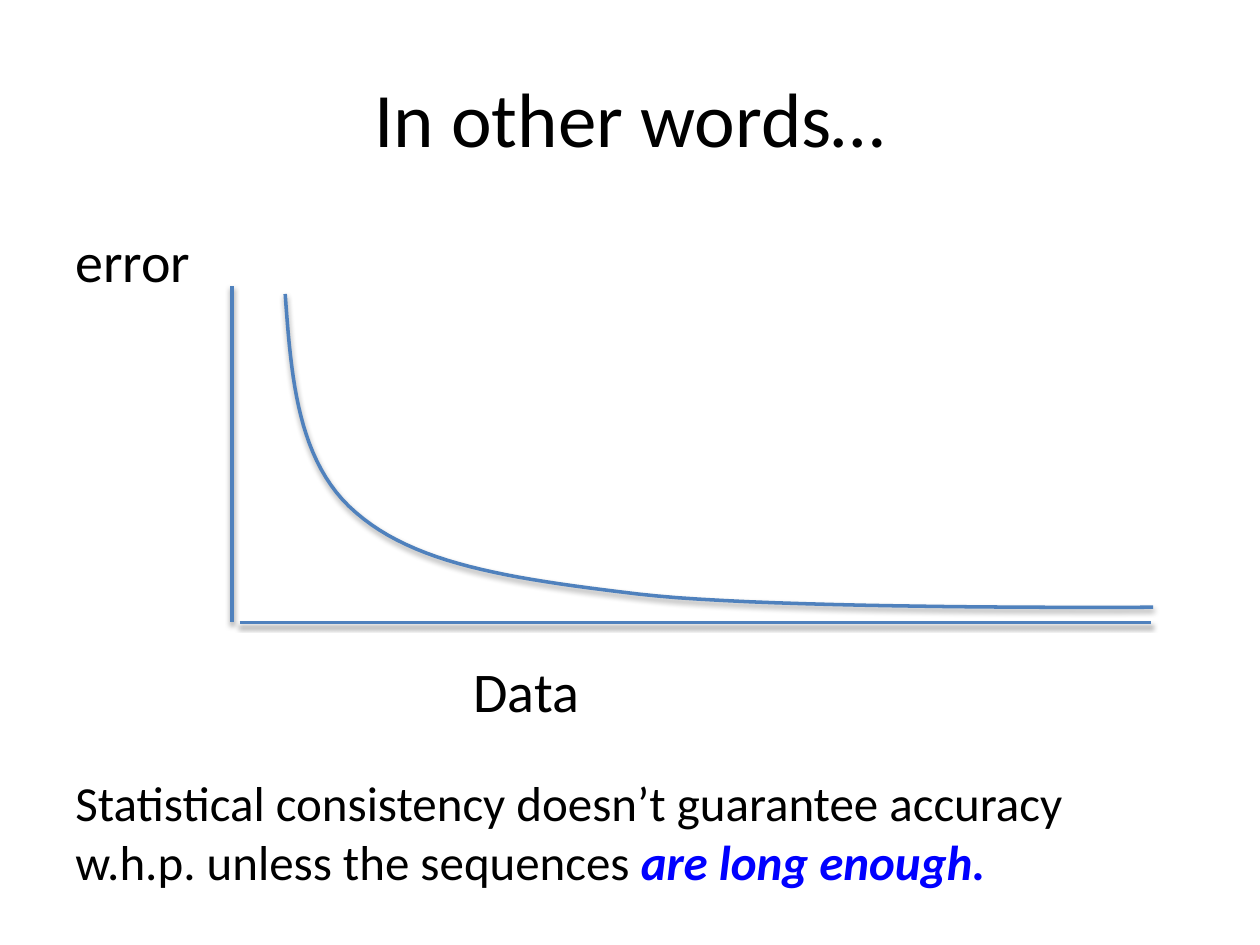
from lxml.etree import SubElement
from pptx import Presentation
from pptx.dml.color import RGBColor
from pptx.enum.shapes import MSO_CONNECTOR
from pptx.enum.text import MSO_ANCHOR, PP_ALIGN
from pptx.oxml.ns import qn
from pptx.util import Pt

BLACK, BLUE, AXIS = "000000", "0000FF", "4F81BD"
FONT = "Calibri"
STEPS = 24


def color(value):
    """Return the colour for a hex string."""
    return RGBColor.from_string(value)


def style_font(font, size, value=BLACK):
    """Set the typeface, size and colour of a font."""
    font.name, font.size = FONT, Pt(size)
    font.color.rgb = color(value)


def place(sp, box):
    """Move a shape to a box of left, top, width and height."""
    sp.left, sp.top, sp.width, sp.height = map(Pt, box)


def add_title(s, box, text):
    """Fill the title placeholder, centred in the box."""
    title = s.shapes.title
    place(title, box)
    tf = title.text_frame
    tf.text = text
    tf.vertical_anchor = MSO_ANCHOR.MIDDLE
    p = tf.paragraphs[0]
    p.alignment = PP_ALIGN.CENTER
    style_font(p.font, 44)


def add_text(s, box, text, size):
    """Add a wrapping text box and return its paragraph."""
    tf = s.shapes.add_textbox(*map(Pt, box)).text_frame
    tf.word_wrap = True
    p = tf.paragraphs[0]
    p.add_run().text = text
    style_font(p.font, size)
    return p


def style_line(sp):
    """Give a line its colour, width and soft shadow straight below."""
    sp.line.color.rgb = color(AXIS)
    sp.line.width = Pt(2)
    sp_pr = sp._element.spPr
    for old in sp_pr.findall(qn("a:effectLst")):
        sp_pr.remove(old)
    effects = SubElement(sp_pr, qn("a:effectLst"))
    shadow = SubElement(effects, qn("a:outerShdw"), blurRad=str(Pt(3.1)),
                        dist=str(Pt(1.6)), dir="5400000", rotWithShape="0")
    clr = SubElement(shadow, qn("a:srgbClr"), val=BLACK)
    SubElement(clr, qn("a:alpha"), val="38000")


def bezier(points, t):
    """Return the point at t on a cubic curve with four control points."""
    weights = ((1 - t) ** 3, 3 * t * (1 - t) ** 2, 3 * t * t * (1 - t), t ** 3)
    return tuple(sum(w * pt[i] for w, pt in zip(weights, points)) for i in (0, 1))


def add_graph(s, box):
    """Draw two axes and a falling error curve inside the box."""
    left, top, width, height = box
    right, bottom = left + width, top + height
    for ends in ((left, top, left, bottom), (left + 4.5, bottom, right, bottom)):
        style_line(s.shapes.add_connector(MSO_CONNECTOR.STRAIGHT, *map(Pt, ends)))

    controls = [(30.5, 4.5), (34, 52.5), (37.5, 101), (71, 129.5), (104.5, 158.5),
                (156.5, 167), (232.5, 176), (308.5, 185), (526.5, 183.5), (526.5, 183.5)]
    controls = [(left + x, top + y) for x, y in controls]
    points = [bezier(controls[i:i + 4], n / STEPS)
              for i in range(0, len(controls) - 1, 3) for n in range(1, STEPS + 1)]
    builder = s.shapes.build_freeform(*map(Pt, controls[0]))
    builder.add_line_segments([(Pt(x), Pt(y)) for x, y in points], close=False)
    curve = builder.convert_to_shape()
    curve.fill.background()
    style_line(curve)


def add_conclusion(s, box):
    """Write the closing sentence with its emphasised end."""
    p = add_text(s, box, "Statistical consistency doesn’t guarantee accuracy "
                 "w.h.p. unless the sequences ", 28)
    r = p.add_run()
    r.text = "are long enough."
    r.font.bold = r.font.italic = True
    r.font.color.rgb = color(BLUE)


def main():
    """Build and save the slide."""
    prs = Presentation()
    prs.slide_width, prs.slide_height = Pt(720), Pt(540)
    s = prs.slides.add_slide(prs.slide_layouts[5])
    add_title(s, (36, 21.6, 648, 90), "In other words…")
    add_text(s, (36, 126, 648, 356.4), "error", 32)
    add_graph(s, (132.5, 163.5, 525.5, 192.2))
    add_text(s, (263.5, 371.5, 184.3, 46), "Data", 32)
    add_conclusion(s, (36, 437.8, 648, 75))
    prs.save("out.pptx")


if __name__ == "__main__":
    main()
